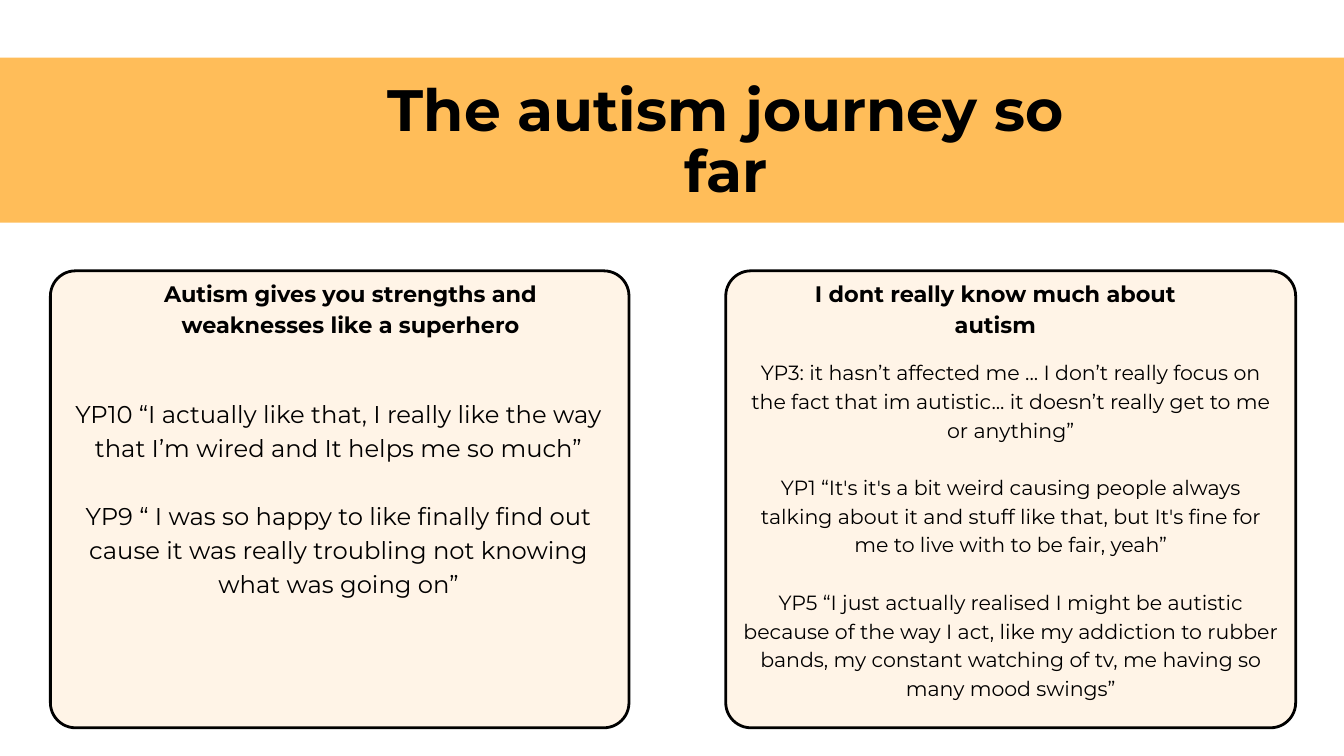
import pptx
import pptx.dml.color
import pptx.enum.shapes
import pptx.enum.text
import pptx.util
from lxml import etree

Pt = pptx.util.Pt

FONT = "Montserrat"
BLACK = "000000"
BAND_COLOUR = "FFBD59"
PANEL_COLOUR = "FFF4E7"
BAND = (-66, 61.8, 1576, 176.8)
TITLE = "The autism journey so far"
TITLE_BOX = (375.8, 87.8, 803.5, 133.2)
LINE_FACTOR = 1.4

PANELS = [
    {
        "box": (54, 290.2, 619.9, 489.6),
        "heading": "Autism gives you strengths and weaknesses like a superhero",
        "heading_box": (101.5, 295.2, 547.9, 64),
        "quotes": [
            "YP10 “I actually like that, I really like the way that I’m wired and It helps me so much”",
            "YP9 “ I was so happy to like finally find out cause it was really troubling not knowing what was going on”",
        ],
        "quotes_box": (75.6, 422.7, 574.6, 285.8),
        "quote_size": 26,
    },
    {
        "box": (777.6, 290.2, 610.6, 489.6),
        "heading": "I dont really know much about autism",
        "heading_box": (833.8, 295.2, 465.1, 64),
        "quotes": [
            "YP3: it hasn’t affected me ... I don’t really focus on the fact that im autistic... it doesn’t really get to me or anything”",
            "YP1 “It's it's a bit weird causing people always talking about it and stuff like that, but It's fine for me to live with to be fair, yeah”",
            "YP5 “I just actually realised I might be autistic because of the way I act, like my addiction to rubber bands, my constant watching of tv, me having so many mood swings”",
        ],
        "quotes_box": (795.6, 381.4, 574.6, 398.4),
        "quote_size": 22,
    },
]


def colour(hex_string):
    return pptx.dml.color.RGBColor.from_string(hex_string)


def place(shape, box):
    shape.left, shape.top, shape.width, shape.height = map(Pt, box)


def fill_placeholder(shape, box, paragraphs, size, line_height, bold=False):
    place(shape, box)
    frame = shape.text_frame
    frame.text = "\n".join(paragraphs)
    frame.word_wrap = True
    frame.auto_size = pptx.enum.text.MSO_AUTO_SIZE.NONE
    frame.vertical_anchor = pptx.enum.text.MSO_ANCHOR.TOP
    frame.margin_left = frame.margin_right = frame.margin_top = frame.margin_bottom = 0
    for index, paragraph in enumerate(frame.paragraphs):
        paragraph.alignment = pptx.enum.text.PP_ALIGN.CENTER
        paragraph.line_spacing = Pt(line_height)
        paragraph.space_before = Pt(line_height if index else 0)
        paragraph.space_after = Pt(0)
        properties = paragraph._p.get_or_add_pPr()
        properties.set("marL", "0")
        properties.set("indent", "0")
        etree.SubElement(properties, pptx.oxml.ns.qn("a:buNone"))
        for run in paragraph.runs:
            run.font.name = FONT
            run.font.size = Pt(size)
            run.font.bold = bold
            run.font.color.rgb = colour(BLACK)


def add_backdrop(slide, kind, box, fill):
    shape = slide.shapes.add_shape(kind, *map(Pt, box))
    shape.shadow.inherit = False
    shape.fill.solid()
    shape.fill.fore_color.rgb = colour(fill)
    shape.line.fill.background()
    slide.shapes.element.insert(2, shape.element)
    return shape


def add_panel(slide, panel, heading, quotes):
    kind = pptx.enum.shapes.MSO_SHAPE.ROUNDED_RECTANGLE
    shape = add_backdrop(slide, kind, panel["box"], PANEL_COLOUR)
    shape.adjustments[0] = 0.055
    shape.line.color.rgb = colour(BLACK)
    shape.line.width = Pt(3)
    fill_placeholder(heading, panel["heading_box"], [panel["heading"]], 24, 24 * LINE_FACTOR, True)
    size = panel["quote_size"]
    fill_placeholder(quotes, panel["quotes_box"], panel["quotes"], size, size * LINE_FACTOR)


def main():
    presentation = pptx.Presentation()
    presentation.slide_width = Pt(1440)
    presentation.slide_height = Pt(810)
    slide = presentation.slides.add_slide(presentation.slide_layouts.get_by_name("Comparison"))
    title, *bodies = slide.placeholders
    fill_placeholder(title, TITLE_BOX, [TITLE], 62.5, 65.6, True)
    add_backdrop(slide, pptx.enum.shapes.MSO_SHAPE.RECTANGLE, BAND, BAND_COLOUR)
    for panel, heading, quotes in zip(PANELS, bodies[::2], bodies[1::2]):
        add_panel(slide, panel, heading, quotes)
    presentation.save("out.pptx")


if __name__ == "__main__":
    main()
